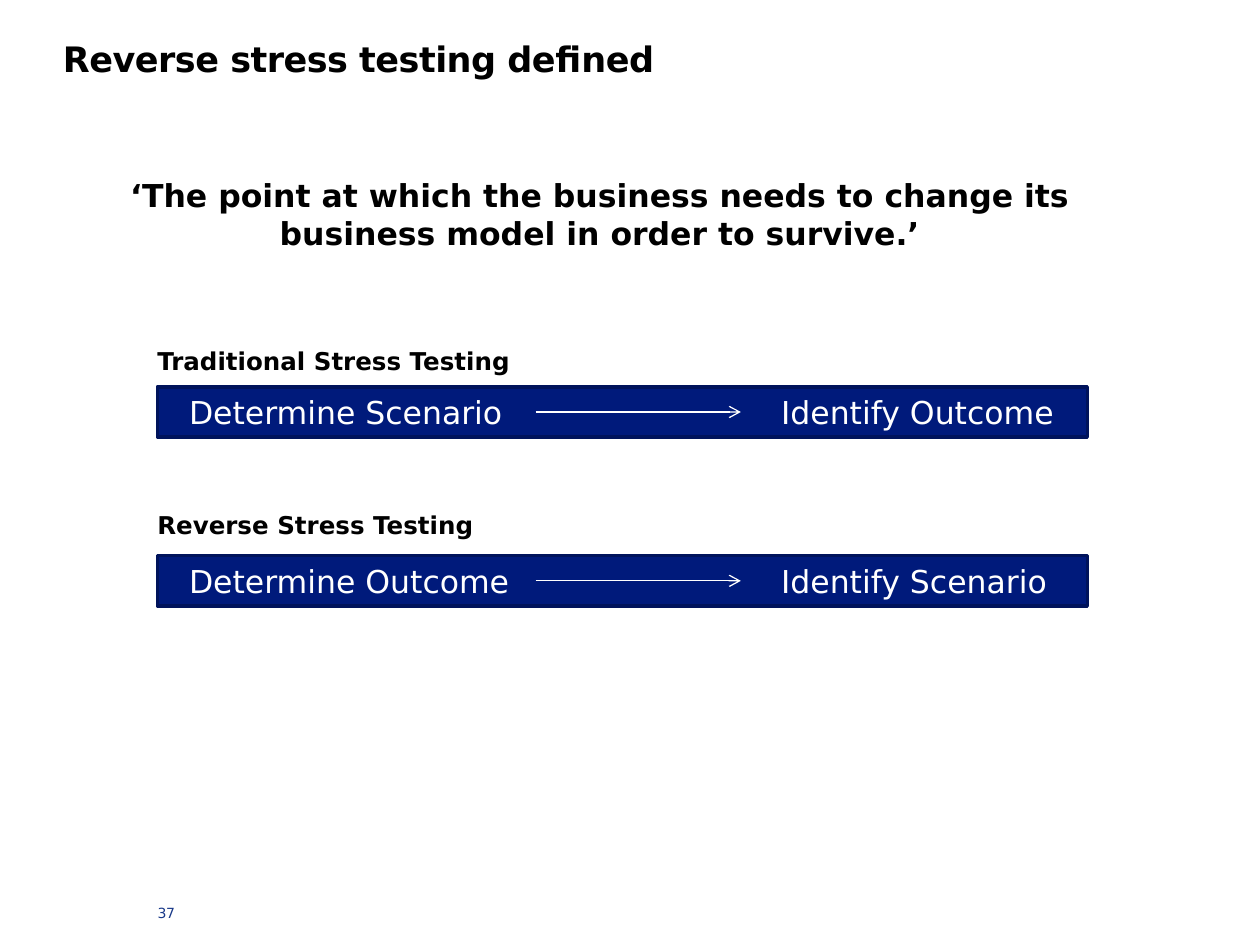
from lxml.etree import SubElement
from pptx import Presentation
from pptx.dml.color import RGBColor
from pptx.enum.shapes import MSO_CONNECTOR, MSO_SHAPE
from pptx.enum.text import MSO_ANCHOR, PP_ALIGN
from pptx.oxml.ns import qn
from pptx.util import Inches, Pt

FONT = "DejaVu Sans"
BLACK = RGBColor(0x00, 0x00, 0x00)
WHITE = RGBColor(0xFF, 0xFF, 0xFF)
NAVY = RGBColor(0x00, 0x1A, 0x7B)
DARK_NAVY = RGBColor(0x00, 0x13, 0x5B)
PAGE_BLUE = RGBColor(0x19, 0x39, 0x89)

BAR_LEFT, BAR_WIDTH, BAR_HEIGHT = 1.25, 7.38, 0.4
FIRST_BAR_TOP, ROW_STEP = 3.07, 1.34
ARROW_START, ARROW_END = 4.25, 5.88
STEP_INDENT, SECOND_STEP = 0.25, 4.7


def write(shape, text, size=18, color=BLACK, bold=False, align=PP_ALIGN.LEFT,
          anchor=MSO_ANCHOR.TOP, inset=0.1, wrap=True, spacing=0, tab=None):
    """Fill a shape with one formatted paragraph; spacing is in 1/100 pt, tab in inches."""
    frame = shape.text_frame
    frame.word_wrap = wrap
    frame.vertical_anchor = anchor
    frame.margin_left = frame.margin_right = Inches(inset)
    frame.margin_top = frame.margin_bottom = Inches(min(inset, 0.05))
    paragraph = frame.paragraphs[0]
    paragraph.alignment = align
    if tab:
        tab_list = SubElement(paragraph._p.get_or_add_pPr(), qn("a:tabLst"))
        SubElement(tab_list, qn("a:tab"), pos=str(Inches(tab)), algn="l")
    run = paragraph.add_run()
    run.text = text
    run.font.name, run.font.size, run.font.bold = FONT, Pt(size), bold
    run.font.color.rgb = color
    if spacing:
        run._r.get_or_add_rPr().set("spc", str(spacing))


def text_box(left, top, width, height, text, **style):
    box = slide.shapes.add_textbox(*map(Inches, (left, top, width, height)))
    write(box, text, **style)


presentation = Presentation()
presentation.slide_width, presentation.slide_height = Inches(10), Inches(7.5)
slide = presentation.slides.add_slide(presentation.slide_layouts[6])

text_box(0.5, 0.3, 7.54, 0.8, "Reverse stress testing defined",
         size=20, bold=True, inset=0, spacing=-30)
text_box(BAR_LEFT, 7.18, 1.42, 0.21, "37", size=8, color=PAGE_BLUE, inset=0, spacing=-10)
text_box(0.5, 1.35, 8.52, 2.12,
         "‘The point at which the business needs to change its business model "
         "in order to survive.’", bold=True, align=PP_ALIGN.CENTER)

approaches = [
    ("Traditional Stress Testing", 2.7, "Determine Scenario", "Identify Outcome"),
    ("Reverse Stress Testing", 4.0, "Determine Outcome", "Identify Scenario"),
]
for row, (heading, heading_top, first_step, second_step) in enumerate(approaches):
    bar_top = FIRST_BAR_TOP + row * ROW_STEP
    bar = slide.shapes.add_shape(MSO_SHAPE.RECTANGLE, Inches(BAR_LEFT), Inches(bar_top),
                                 Inches(BAR_WIDTH), Inches(BAR_HEIGHT))
    bar.shadow.inherit = False
    bar.fill.solid()
    bar.fill.fore_color.rgb = NAVY
    bar.line.color.rgb = DARK_NAVY
    bar.line.width = Pt(2)
    write(bar, f"{first_step}\t{second_step}", color=WHITE, anchor=MSO_ANCHOR.MIDDLE,
          inset=STEP_INDENT, tab=SECOND_STEP)

    middle = Inches(bar_top + BAR_HEIGHT / 2)
    arrow = slide.shapes.add_connector(MSO_CONNECTOR.STRAIGHT, Inches(ARROW_START), middle,
                                       Inches(ARROW_END), middle)
    arrow.line.color.rgb = WHITE
    arrow.line.width = Pt(0.75)
    SubElement(arrow.line._get_or_add_ln(), qn("a:tailEnd"), type="arrow")
    SubElement(arrow._element.spPr, qn("a:effectLst"))

    text_box(BAR_LEFT - 0.1, heading_top, 3.03, 0.34, heading,
             size=14, bold=True, wrap=False)

presentation.save("out.pptx")
